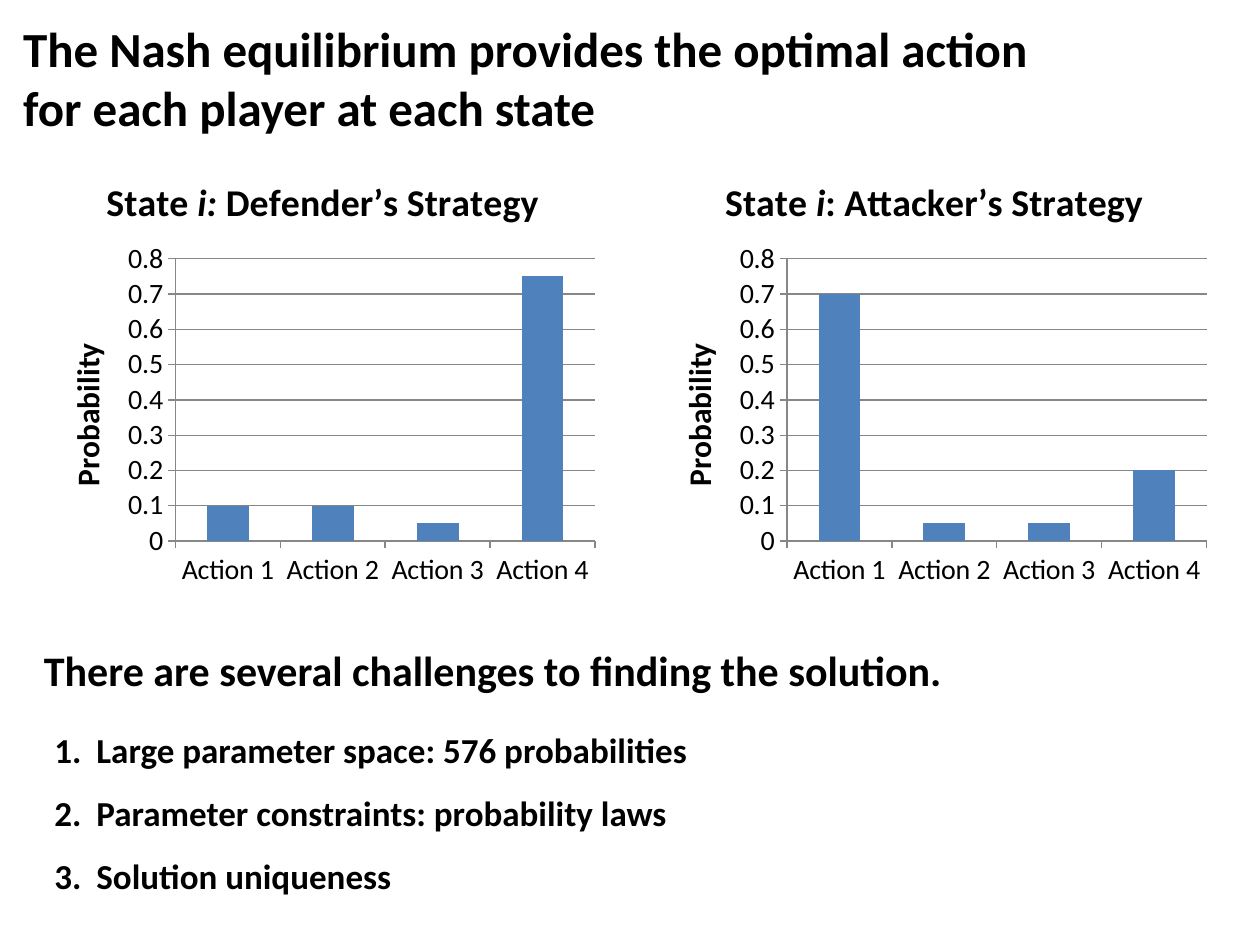
from dataclasses import dataclass

from pptx import Presentation
from pptx.chart.data import CategoryChartData
from pptx.dml.color import RGBColor
from pptx.enum.chart import XL_CHART_TYPE, XL_TICK_MARK
from pptx.enum.text import MSO_ANCHOR, MSO_AUTO_SIZE, PP_ALIGN
from pptx.oxml import parse_xml
from pptx.oxml.ns import nsdecls
from pptx.util import Inches, Pt

COLUMN_CLUSTERED = XL_CHART_TYPE.COLUMN_CLUSTERED
TICK_OUTSIDE = XL_TICK_MARK.OUTSIDE
TICK_NONE = XL_TICK_MARK.NONE
TOP, MIDDLE = MSO_ANCHOR.TOP, MSO_ANCHOR.MIDDLE
NO_AUTOFIT = MSO_AUTO_SIZE.NONE
LEFT = PP_ALIGN.LEFT


@dataclass
class Theme:
    font: str = "Calibri"
    text: RGBColor = RGBColor(0, 0, 0)
    bar: RGBColor = RGBColor(0x4F, 0x81, 0xBD)
    rule: RGBColor = RGBColor(0x87, 0x87, 0x87)
    title: float = 28
    heading: float = 24
    item: float = 20
    chart_title: float = 21.6
    axis_title: float = 18
    axis: float = 16


theme = Theme()
deck = Presentation()
deck.slide_width, deck.slide_height = Inches(10), Inches(7.5)
page = deck.slides.add_slide(deck.slide_layouts[5])

# Grid of 120 columns by 90 rows
COLUMN = deck.slide_width / 120
ROW = deck.slide_height / 90


def place(left, top, width, height):
    return int(left * COLUMN), int(top * ROW), int(width * COLUMN), int(height * ROW)


def add_run(para, text, size, bold=True, italic=False):
    span = para.add_run()
    span.text = text
    span.font.name = theme.font
    span.font.size = Pt(size)
    span.font.bold = bold
    span.font.italic = italic
    span.font.color.rgb = theme.text


# Title
title = page.shapes.title
title.left, title.top, title.width, title.height = place(1, 1.1, 117, 12.5)
title.text_frame.word_wrap = True
title.text_frame.auto_size = NO_AUTOFIT
title.text_frame.vertical_anchor = MIDDLE
para = title.text_frame.paragraphs[0]
para.alignment = LEFT
add_run(para, "The Nash equilibrium provides the optimal action ", theme.title)
para.add_line_break()
add_run(para, "for each player at each state", theme.title)

# Strategy charts: left column, heading runs (text, italic), probabilities
strategies = [
    (3.75, [("State ", False), ("i:", True), (" Defender’s Strategy", False)],
     (0.1, 0.1, 0.05, 0.75)),
    (62, [("State ", False), ("i", True), (": Attacker’s Strategy", False)],
     (0.7, 0.05, 0.05, 0.2)),
]
plot_shares = {"x": 0.24, "y": 0.23, "w": 0.74, "h": 0.64}
for left, heading, probabilities in strategies:
    data = CategoryChartData()
    data.categories = [f"Action {number}" for number in range(1, 5)]
    data.add_series("Series 1", probabilities)
    chart = page.shapes.add_chart(
        COLUMN_CLUSTERED, *place(left, 15, 54, 42), data).chart
    chart.has_legend = False
    chart.font.name = theme.font
    chart.font.size = Pt(theme.axis_title)
    chart.font.color.rgb = theme.text

    # Chart heading and bars
    chart.has_title = True
    chart.chart_title.include_in_layout = False
    for text, italic in heading:
        add_run(chart.chart_title.text_frame.paragraphs[0], text,
                theme.chart_title, italic=italic)
    plot = chart.plots[0]
    plot.gap_width = 150
    plot.vary_by_categories = False
    bars = plot.series[0].format.fill
    bars.solid()
    bars.fore_color.rgb = theme.bar

    # Axes
    values = chart.value_axis
    values.minimum_scale, values.maximum_scale, values.major_unit = 0, 0.8, 0.1
    values.has_major_gridlines = True
    values.major_gridlines.format.line.color.rgb = theme.rule
    values.major_gridlines.format.line.width = Pt(0.75)
    values.tick_labels.number_format = "General"
    values.tick_labels.number_format_is_linked = False
    values.has_title = True
    add_run(values.axis_title.text_frame.paragraphs[0], "Probability",
            theme.axis_title)
    for axis in (chart.category_axis, values):
        axis.major_tick_mark = TICK_OUTSIDE
        axis.minor_tick_mark = TICK_NONE
        axis.tick_labels.font.size = Pt(theme.axis)
        axis.format.line.color.rgb = theme.rule
        axis.format.line.width = Pt(0.75)

    # Fixed inner plot area, as shares of the chart
    area = chart.element.chart.plotArea
    for old in area.xpath("c:layout"):
        area.remove(old)
    shares = "".join(f'<c:{key} val="{share}"/>' for key, share in plot_shares.items())
    area.insert(0, parse_xml(
        f'<c:layout {nsdecls("c")}><c:manualLayout><c:layoutTarget val="inner"/>'
        f'<c:xMode val="edge"/><c:yMode val="edge"/>{shares}'
        '</c:manualLayout></c:layout>'))

# Challenges: text, size, hanging indent, place
challenges = [
    ("There are several challenges to finding the solution.",
     theme.heading, 0, (3, 60.8, 117, 6)),
    ("1.\tLarge parameter space: 576 probabilities",
     theme.item, 4, (4, 68.75, 88, 5.25)),
    ("2.\tParameter constraints: probability laws",
     theme.item, 4, (4, 74.75, 86, 5.25)),
    ("3.\tSolution uniqueness",
     theme.item, 4, (4, 80.75, 64, 5.25)),
]
for text, size, hanging, position in challenges:
    box = page.shapes.add_textbox(*place(*position))
    box.text_frame.word_wrap = True
    box.text_frame.vertical_anchor = TOP
    para = box.text_frame.paragraphs[0]
    para.alignment = LEFT
    if hanging:
        indent = int(hanging * COLUMN)
        properties = para._p.get_or_add_pPr()
        properties.set("marL", str(indent))
        properties.set("indent", str(-indent))
    add_run(para, text, size)

deck.save("out.pptx")
